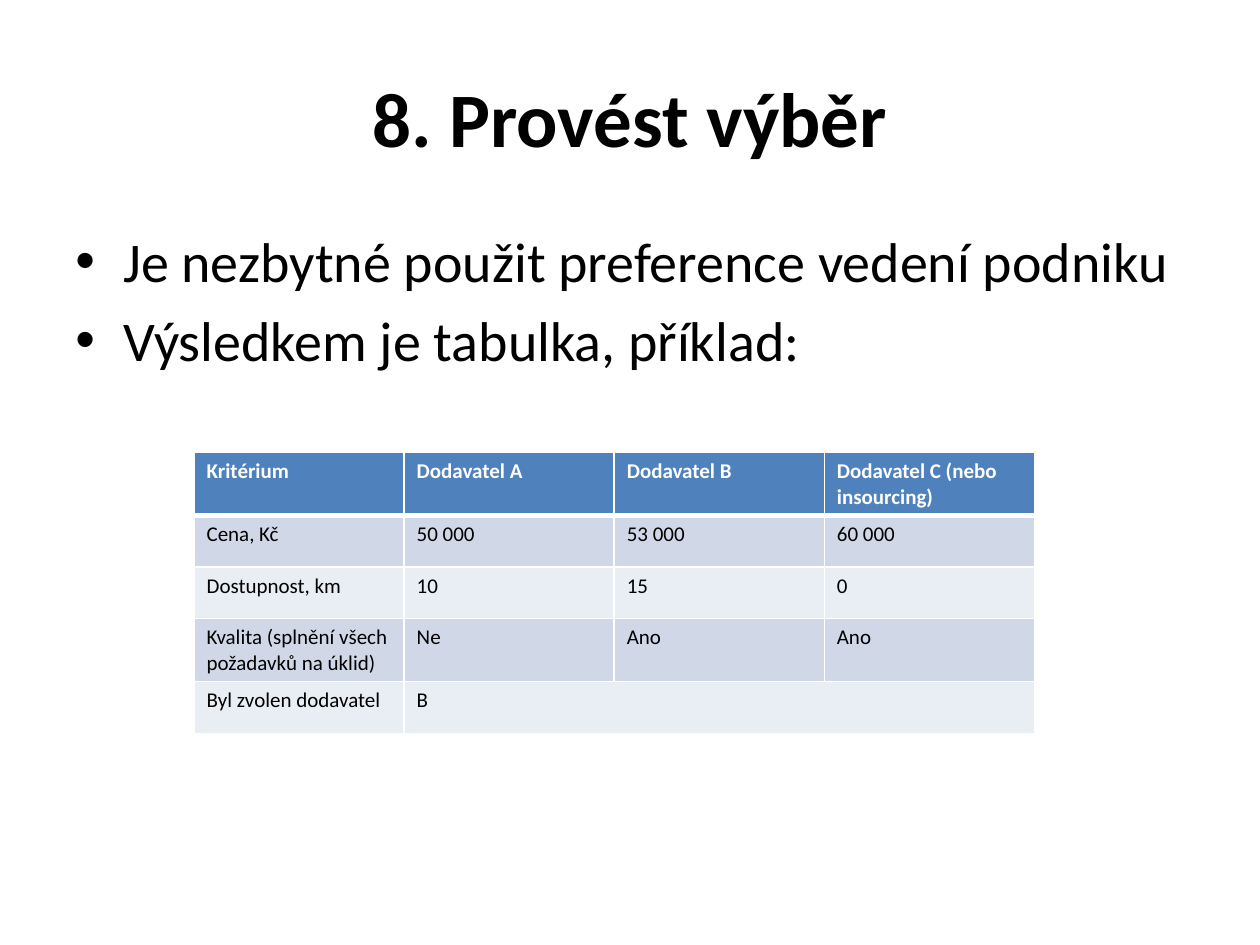
from dataclasses import dataclass

import pptx
import pptx.dml.color
import pptx.enum.text
import pptx.oxml
import pptx.oxml.ns
import pptx.util
from pptx.util import Inches

COLORS = {
    "ink": "000000",
    "white": "FFFFFF",
    "head": "4F81BD",
    "odd": "D0D8E8",
    "even": "E9EDF4",
}
ALIGN = pptx.enum.text.PP_ALIGN
ANCHOR = pptx.enum.text.MSO_ANCHOR


@dataclass
class Row:
    texts: list[str]
    fill: str
    ink: str = "ink"
    bold: bool = False
    base: float = 1  # width of the bottom border in points


ROWS = [
    Row(["Kritérium", "Dodavatel A", "Dodavatel B",
         "Dodavatel C (nebo insourcing)"], "head", "white", True, 3),
    Row(["Cena, Kč", "50 000", "53 000", "60 000"], "odd"),
    Row(["Dostupnost, km", "10", "15", "0"], "even"),
    Row(["Kvalita (splnění všech požadavků na úklid)", "Ne", "Ano", "Ano"], "odd"),
    Row(["Byl zvolen dodavatel", "B"], "even"),
]
POINTS = [
    "Je nezbytné použit preference vedení podniku",
    "Výsledkem je tabulka, příklad:",
]


def rgb(name: str):
    return pptx.dml.color.RGBColor.from_string(COLORS[name])


def write(para, text: str, size: float, color: str = "ink", bold: bool = False,
          align=ALIGN.LEFT, before: float = 0, bullet: bool = False) -> None:
    """Fill one paragraph with formatted text."""
    para.alignment = align
    para.space_before = pptx.util.Pt(before)
    if bullet:
        props = para._p.get_or_add_pPr()
        props.set("marL", str(Inches(0.38)))
        props.set("indent", str(-Inches(0.38)))
        space = pptx.oxml.ns.nsdecls("a")
        for tag in (f'<a:buFont {space} typeface="Arial"/>',
                    f'<a:buChar {space} char="•"/>'):
            props.append(pptx.oxml.parse_xml(tag))
    run = para.add_run()
    run.text = text
    run.font.name = "Calibri"
    run.font.size = pptx.util.Pt(size)
    run.font.bold = bold
    run.font.color.rgb = rgb(color)


def edge(cell, side: str, width: float) -> None:
    """Add one white border to a cell."""
    cell._tc.get_or_add_tcPr().append(pptx.oxml.parse_xml(
        f'<a:ln{side} {pptx.oxml.ns.nsdecls("a")} w="{pptx.util.Pt(width)}">'
        f'<a:solidFill><a:srgbClr val="{COLORS["white"]}"/></a:solidFill>'
        f'</a:ln{side}>'))


def draw_row(table, index: int, row: Row) -> None:
    table.rows[index].height = Inches(0.41)
    top = ROWS[index - 1].base if index else 1
    for cell in table.rows[index].cells:
        for side, width in zip("LRTB", (1, 1, top, row.base)):
            edge(cell, side, width)
        cell.fill.solid()
        cell.fill.fore_color.rgb = rgb(row.fill)
    for col, text in enumerate(row.texts):
        write(table.cell(index, col).text_frame.paragraphs[0], text, 12,
              color=row.ink, bold=row.bold)


def main() -> None:
    deck = pptx.Presentation()
    deck.slide_width, deck.slide_height = Inches(10), Inches(7.5)
    slide = deck.slides.add_slide(deck.slide_layouts[5])

    # Title
    title = slide.shapes.title
    title.left, title.top = Inches(0.5), Inches(0.3)
    title.width, title.height = Inches(9), Inches(1.25)
    title.text_frame.vertical_anchor = ANCHOR.MIDDLE
    write(title.text_frame.paragraphs[0], "8. Provést výběr", 44,
          bold=True, align=ALIGN.CENTER)

    # Bullet points
    body = slide.shapes.add_textbox(
        Inches(0.5), Inches(1.75), Inches(9), Inches(4.95)).text_frame
    body.word_wrap = True
    for index, text in enumerate(POINTS):
        para = body.add_paragraph() if index else body.paragraphs[0]
        write(para, text, 32, before=6.4 if index else 0, bullet=True)

    # Supplier table
    table = slide.shapes.add_table(
        len(ROWS), 4, Inches(1.54), Inches(3.59), Inches(6.67), Inches(2.05)).table
    for index, row in enumerate(ROWS):
        draw_row(table, index, row)
    last = len(ROWS) - 1
    table.cell(last, 1).merge(table.cell(last, 3))

    deck.save("out.pptx")


if __name__ == "__main__":
    main()
